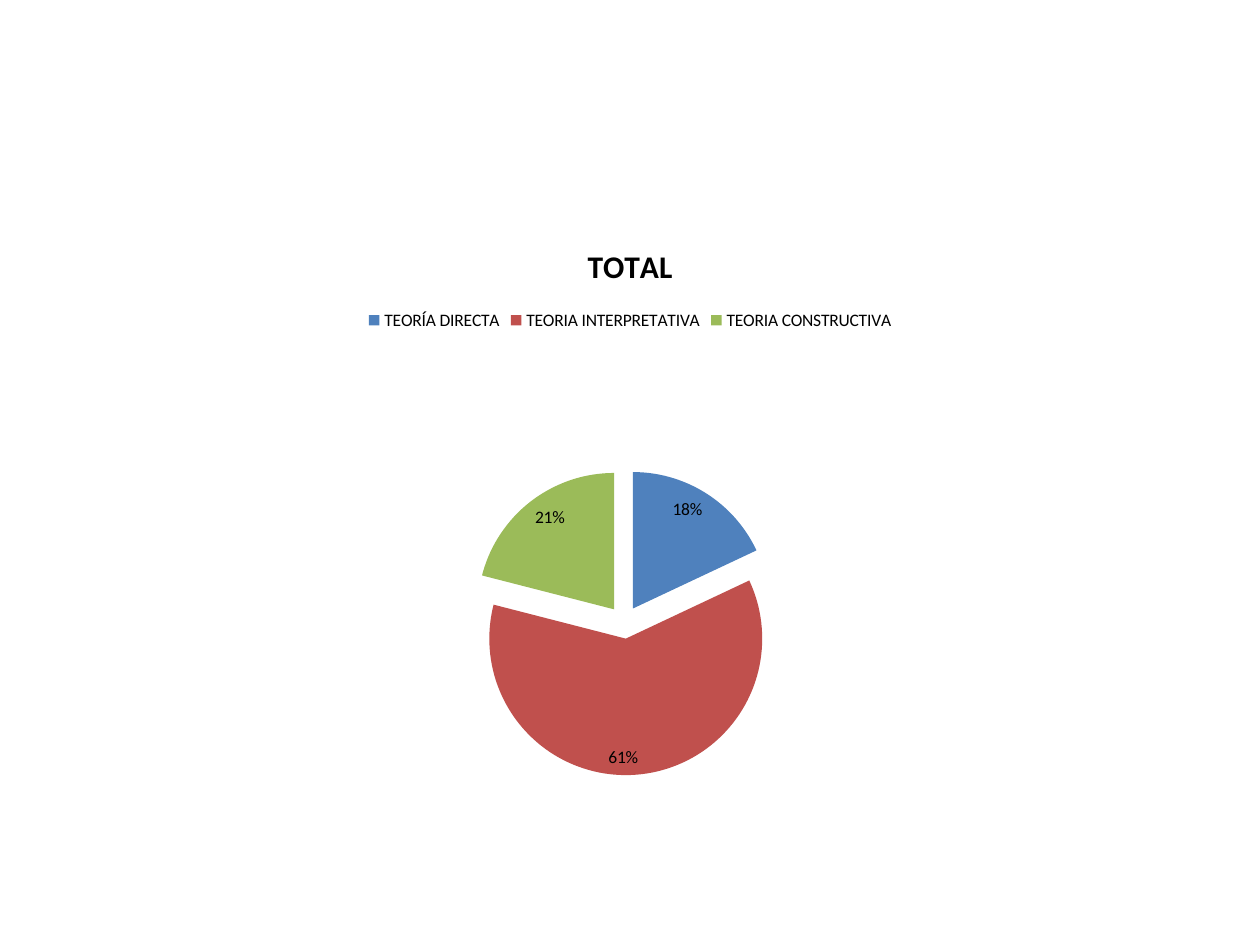
from dataclasses import dataclass

from pptx import Presentation, util as u
from pptx.chart.data import CategoryChartData
from pptx.dml.color import RGBColor
from pptx.enum import chart as c
from pptx.oxml import parse_xml
from pptx.oxml.ns import nsdecls

EMU_PER_PX = 914400 / 126


@dataclass(frozen=True)
class Theme:
    font: str = "Calibri"
    text: str = "000000"
    slices: tuple = ("4F81BD", "C0504D", "9BBB59")
    title_size: int = 18
    body_size: int = 10


THEME = Theme()
SHARES = {"TEORÍA DIRECTA": 18, "TEORIA INTERPRETATIVA": 61, "TEORIA CONSTRUCTIVA": 21}


def px(length):
    return u.Emu(round(length * EMU_PER_PX))


def style_font(font, size, bold=False):
    font.name = THEME.font
    font.size = u.Pt(size)
    font.bold = bold
    font.color.rgb = RGBColor.from_string(THEME.text)


def add_pie(page, title, shares, left, top, width, height):
    data = CategoryChartData()
    data.categories = shares.keys()
    data.add_series(title, shares.values())
    frame = page.shapes.add_chart(
        c.XL_CHART_TYPE.PIE, px(left), px(top), px(width), px(height), data)
    return frame.chart


def add_title(chart, title):
    chart.has_title = True
    para = chart.chart_title.text_frame.paragraphs[0]
    para.text = title
    style_font(para.font, THEME.title_size, bold=True)
    chart.chart_title.include_in_layout = False


def add_legend(chart):
    chart.has_legend = True
    chart.legend.position = c.XL_LEGEND_POSITION.TOP
    chart.legend.include_in_layout = False
    style_font(chart.legend.font, THEME.body_size)


def place_plot(chart, x, y, w, h):
    """Fix the inner plot area, in fractions of the chart's size."""
    area = chart.element.xpath(".//c:plotArea")[0]
    for old in area.xpath("./c:layout"):
        area.remove(old)
    sizes = "".join(f'<c:{name} val="{value}"/>'
                    for name, value in zip("xywh", (x, y, w, h)))
    area.insert(0, parse_xml(
        f'<c:layout {nsdecls("c")}><c:manualLayout><c:layoutTarget val="inner"/>'
        f'<c:xMode val="edge"/><c:yMode val="edge"/>{sizes}'
        '</c:manualLayout></c:layout>'))


def explode_slices(chart, percent):
    categories = chart.element.xpath(".//c:ser/c:cat")[0]
    categories.addprevious(
        parse_xml(f'<c:explosion {nsdecls("c")} val="{percent}"/>'))


def color_slices(chart):
    points = chart.plots[0].series[0].points
    for index, color in enumerate(THEME.slices):
        fill = points[index].format.fill
        fill.solid()
        fill.fore_color.rgb = RGBColor.from_string(color)


def label_slices(chart):
    labels = chart.plots[0].series[0].data_labels
    labels.show_value = False
    labels.show_percentage = True
    labels.number_format = "0%"
    labels.number_format_is_linked = False
    labels.position = c.XL_LABEL_POSITION.INSIDE_END
    style_font(labels.font, THEME.body_size)


def main():
    deck = Presentation()
    deck.slide_width, deck.slide_height = px(1260), px(945)
    page = deck.slides.add_slide(deck.slide_layouts[6])
    chart = add_pie(page, "TOTAL", SHARES, 63, 220, 1134, 624)
    style_font(chart.font, THEME.body_size)
    chart.plots[0].vary_by_categories = True
    add_title(chart, "TOTAL")
    add_legend(chart)
    place_plot(chart, 0.09, 0.4, 0.81, 0.49)
    explode_slices(chart, 12)
    color_slices(chart)
    label_slices(chart)
    deck.save("out.pptx")


if __name__ == "__main__":
    main()
